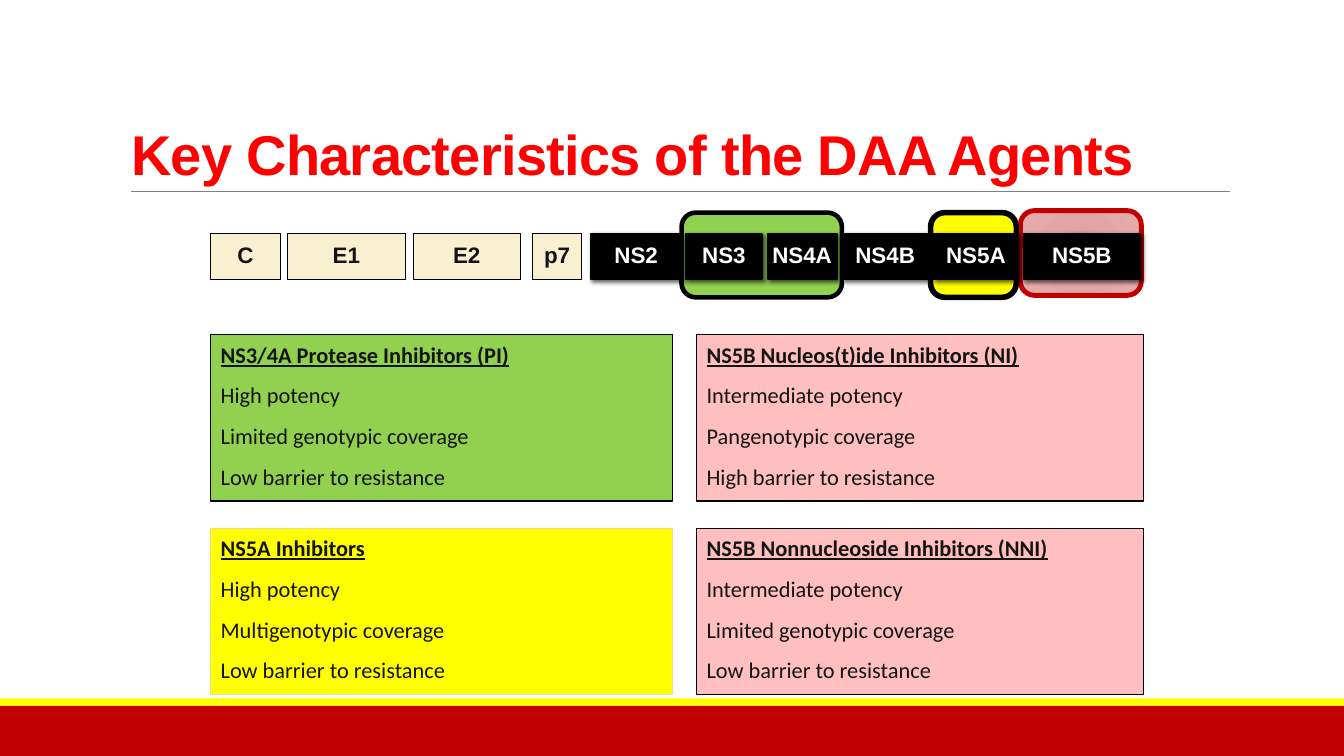
from pptx import Presentation
from pptx.dml.color import RGBColor
from pptx.enum.shapes import MSO_CONNECTOR, MSO_SHAPE
from pptx.enum.text import MSO_ANCHOR, MSO_AUTO_SIZE, PP_ALIGN
from pptx.oxml import parse_xml
from pptx.oxml.ns import nsdecls, qn
from pptx.util import Inches, Pt

RECT = MSO_SHAPE.RECTANGLE
ROUND = MSO_SHAPE.ROUNDED_RECTANGLE
STRAIGHT = MSO_CONNECTOR.STRAIGHT
MIDDLE = MSO_ANCHOR.MIDDLE
BOTTOM = MSO_ANCHOR.BOTTOM
LEFT = PP_ALIGN.LEFT
CENTER = PP_ALIGN.CENTER
FIXED = MSO_AUTO_SIZE.NONE

COLORS = {
    "black": "000000", "white": "FFFFFF", "ink": "141415", "gray": "808080",
    "red": "FF0000", "dark": "C00000", "yellow": "FFFF00", "green": "92D050",
    "pink": "FFBFBF", "cream": "F9F0D2", "gold": "EFDA8E", "rose": "E0A6A6",
}
STOPS = ((0, "D99494"), (45, "E0A6A6"), (100, "E8ACAC"))

GENE_TOP, GENE_HIGH = 2.32, 0.45
CORE = (("C", 2.09, 0.69), ("E1", 2.85, 1.17), ("E2", 4.1, 1.06), ("p7", 5.28, 0.49))
NONCORE = (("NS2", 5.86, 0.9), ("NS3", 6.8, 0.76), ("NS4A", 7.61, 0.69),
           ("NS4B", 8.36, 0.84), ("NS5B", 10.15, 1.16))

COLUMNS = ((2.09, 4.58), (6.91, 4.43))
ROWS = (3.32, 5.24)
CARDS = (
    (0, 0, "green", "black", ("NS3/4A Protease Inhibitors (PI)", "High potency",
                              "Limited genotypic coverage", "Low barrier to resistance")),
    (0, 1, "yellow", "gold", ("NS5A Inhibitors", "High potency",
                              "Multigenotypic coverage", "Low barrier to resistance")),
    (1, 0, "pink", "black", ("NS5B Nucleos(t)ide Inhibitors (NI)", "Intermediate potency",
                             "Pangenotypic coverage", "High barrier to resistance")),
    (1, 1, "pink", "black", ("NS5B Nonnucleoside Inhibitors (NNI)", "Intermediate potency",
                             "Limited genotypic coverage", "Low barrier to resistance")),
)


def rgb(name):
    return RGBColor.from_string(COLORS[name])


def style(font, face, size, color, bold):
    font.name = face
    font.size = Pt(size)
    font.bold = bold
    font.color.rgb = rgb(color)


def add_box(slide, kind, at, fill, line=None, width=1):
    box = slide.shapes.add_shape(kind, *map(Inches, at))
    box.shadow.inherit = False
    box.fill.solid()
    box.fill.fore_color.rgb = rgb(fill)
    if line:
        box.line.color.rgb = rgb(line)
        box.line.width = Pt(width)
    else:
        box.line.fill.background()
    return box


def add_rule(slide):
    rule = slide.shapes.add_connector(
        STRAIGHT, Inches(1.3), Inches(1.9), Inches(12.2), Inches(1.9))
    rule.line.color.rgb = rgb("gray")
    rule.line.width = Pt(0.5)
    rule._element.spPr.append(parse_xml(f"<a:effectLst {nsdecls('a')}/>"))


def add_title(slide, text):
    title = slide.shapes.title
    title.left, title.top = Inches(1.2), Inches(0.31)
    title.width, title.height = Inches(11), Inches(1.59)
    frame = title.text_frame
    frame.text = text
    frame.auto_size = FIXED
    frame.vertical_anchor = BOTTOM
    par = frame.paragraphs[0]
    par.alignment = LEFT
    par.line_spacing = 0.85
    style(par.font, "Arial", 40, "red", True)
    par.runs[0]._r.get_or_add_rPr().set("spc", "-50")


def add_shade(box):
    props = box._element.spPr
    props.remove(props.find(qn("a:effectLst")))
    props.append(parse_xml(
        f'<a:effectLst {nsdecls("a")}><a:outerShdw blurRad="{Pt(3)}" dist="{Pt(2)}" '
        'dir="2700000"><a:srgbClr val="000000"><a:alpha val="60000"/></a:srgbClr>'
        '</a:outerShdw></a:effectLst>'))


def add_glow(box):
    stops = "".join(f'<a:gs pos="{pos * 1000}"><a:srgbClr val="{tone}"/></a:gs>'
                    for pos, tone in STOPS)
    props = box._element.spPr
    props.replace(props.find(qn("a:solidFill")), parse_xml(
        f'<a:gradFill {nsdecls("a")}><a:gsLst>{stops}</a:gsLst><a:path path="circle">'
        '<a:fillToRect l="100000" t="100000" r="100000" b="100000"/>'
        '</a:path></a:gradFill>'))


def add_gene(slide, name, left, width, core=False):
    fill, color, line = ("cream", "ink", 0.75) if core else ("black", "white", 1)
    box = add_box(slide, RECT, (left, GENE_TOP, width, GENE_HIGH), fill, "black", line)
    if not core:
        add_shade(box)
    frame = box.text_frame
    frame.text = name
    frame.word_wrap = True
    frame.vertical_anchor = MIDDLE
    frame.margin_left = frame.margin_right = Inches(0.03)
    par = frame.paragraphs[0]
    par.alignment = CENTER
    par.line_spacing = 0.9
    style(par.font, "Arial", 16, color, True)


def add_card(slide, col, row, fill, line, lines):
    left, width = COLUMNS[col]
    box = add_box(slide, ROUND, (left, ROWS[row], width, 1.65), fill, line)
    box.adjustments[0] = 0
    frame = box.text_frame
    frame.text = "\n".join(lines)
    frame.word_wrap = True
    frame.vertical_anchor = MIDDLE
    for rank, par in enumerate(frame.paragraphs):
        par.alignment = LEFT
        par.line_spacing = 0.8
        par.space_before = Pt(5.6 if rank else 0)
        par.space_after = Pt(8)
        style(par.font, "Calibri", 16, "ink", rank == 0)
        par.font.underline = rank == 0


def main():
    deck = Presentation()
    deck.slide_width, deck.slide_height = Inches(13.33), Inches(7.5)
    slide = deck.slides.add_slide(deck.slide_layouts[5])
    add_box(slide, RECT, (0, 7, 13.33, 0.5), "dark")
    add_box(slide, RECT, (0, 6.93, 13.33, 0.07), "yellow")
    add_rule(slide)
    add_title(slide, "Key Characteristics of the DAA Agents")
    for card in CARDS:
        add_card(slide, *card)
    add_box(slide, ROUND, (6.76, 2.11, 1.59, 0.84), "green", "black", 3.25)
    add_glow(add_box(slide, ROUND, (10.12, 2.09, 1.2, 0.84), "rose", "dark", 3.5))
    for gene in CORE:
        add_gene(slide, *gene, core=True)
    for gene in NONCORE:
        add_gene(slide, *gene)
    add_box(slide, ROUND, (9.23, 2.11, 0.85, 0.84), "yellow", "black", 4)
    add_gene(slide, "NS5A", 9.26, 0.84)
    deck.save("out.pptx")


if __name__ == "__main__":
    main()
